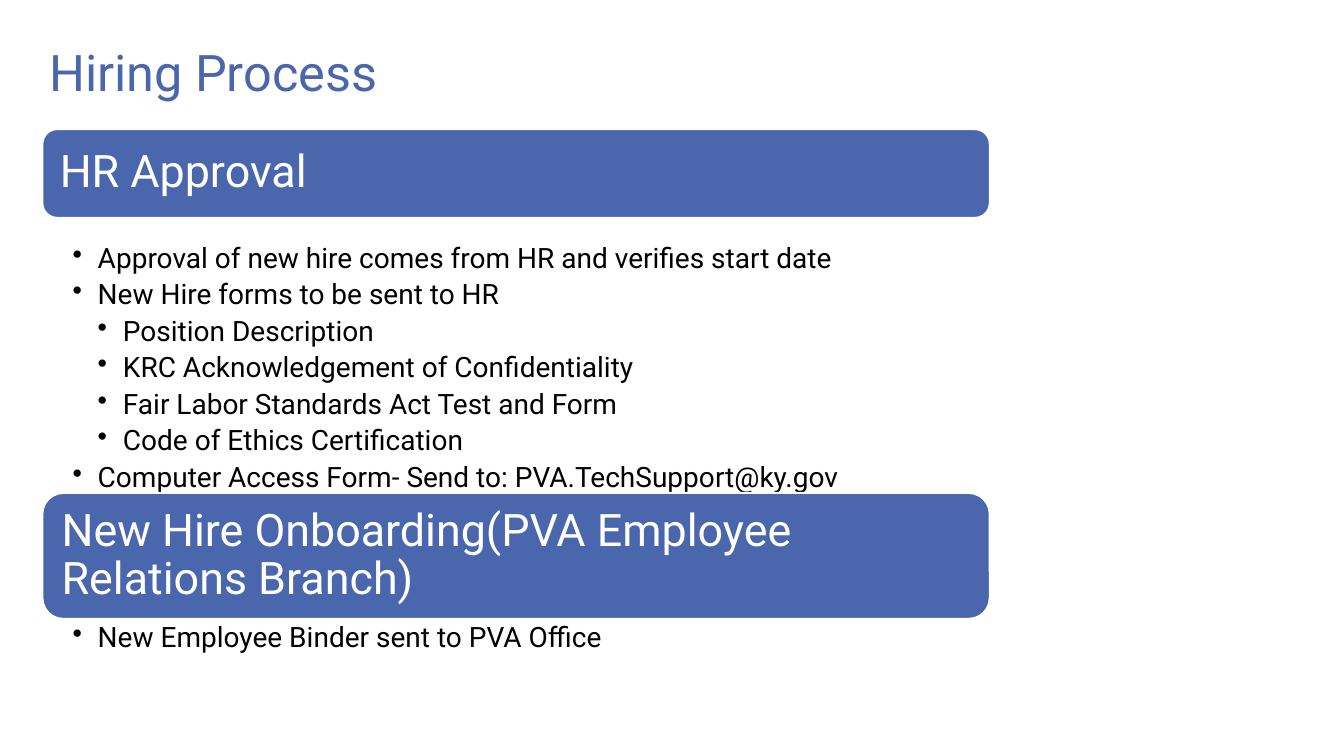
import pptx
import pptx.dml.color
import pptx.enum.shapes
import pptx.enum.text
import pptx.oxml.ns
import pptx.util
from lxml import etree

Pt = pptx.util.Pt
BLUE = pptx.dml.color.RGBColor(0x4A, 0x66, 0xAC)
WHITE = pptx.dml.color.RGBColor(0xFF, 0xFF, 0xFF)
BLACK = pptx.dml.color.RGBColor(0, 0, 0)
LEFT, WIDTH = 30.24, 676.8
MIDDLE = pptx.enum.text.MSO_ANCHOR.MIDDLE
ALIGN = pptx.enum.text.PP_ALIGN.LEFT


class Deck:
    font = "Roboto"
    step = 18

    def __init__(self):
        self.file = pptx.Presentation()
        self.file.slide_width = Pt(960)
        self.file.slide_height = Pt(540)
        self.slide = self.file.slides.add_slide(self.file.slide_layouts[6])

    def style(self, item, values):
        for name, value in values.items():
            setattr(item, name, value)

    def label(self, para, text, size, color):
        self.style(para, {"text": text, "alignment": ALIGN})
        self.style(para.font, {"name": self.font, "size": Pt(size)})
        para.font.color.rgb = color

    def box(self, left, top, width, height, values):
        shape = self.slide.shapes.add_textbox(Pt(left), Pt(top), Pt(width), Pt(height))
        self.style(shape.text_frame, {"word_wrap": True, **values})
        return shape.text_frame

    def title(self, text, left, top, width, height):
        frame = self.box(left, top, width, height, {"vertical_anchor": MIDDLE})
        self.label(frame.paragraphs[0], text, 36, BLUE)

    def banner(self, text, top, height):
        shape = self.slide.shapes.add_shape(
            pptx.enum.shapes.MSO_SHAPE.ROUNDED_RECTANGLE,
            Pt(LEFT), Pt(top), Pt(WIDTH), Pt(height))
        shape.shadow.inherit = False
        shape.fill.solid()
        shape.fill.fore_color.rgb = BLUE
        shape.line.color.rgb = WHITE
        shape.line.width = Pt(1.5)
        pad = Pt(9.4)
        self.style(shape.text_frame, {
            "word_wrap": True, "vertical_anchor": MIDDLE,
            "margin_left": pad, "margin_right": pad,
            "margin_top": pad, "margin_bottom": pad})
        para = shape.text_frame.paragraphs[0]
        self.label(para, text, 32, WHITE)
        para.line_spacing = 0.9

    def bullets(self, items, top, height):
        frame = self.box(LEFT, top, WIDTH, height, {
            "margin_left": Pt(21.6), "margin_right": Pt(14.4),
            "margin_top": Pt(2.9), "margin_bottom": Pt(2.9)})
        for index, (level, text) in enumerate(items):
            para = frame.add_paragraph() if index else frame.paragraphs[0]
            self.label(para, text, 20, BLACK)
            self.style(para, {"level": level, "line_spacing": 0.9, "space_after": Pt(4.5)})
            props = para._p.get_or_add_pPr()
            props.set("marL", str(Pt(self.step * level)))
            props.set("indent", str(-Pt(self.step)))
            mark = etree.Element(pptx.oxml.ns.qn("a:buChar"), char="•")
            props.find(pptx.oxml.ns.qn("a:spcAft")).addnext(mark)


def main():
    deck = Deck()
    deck.title("Hiring Process", 28, 14.4, 340.6, 73.4)
    deck.banner("HR Approval", 92.2, 63.4)
    deck.bullets([
        (1, "Approval of new hire comes from HR and verifies start date"),
        (1, "New Hire forms to be sent to HR"),
        (2, "Position Description"),
        (2, "KRC Acknowledgement of Confidentiality"),
        (2, "Fair Labor Standards Act Test and Form"),
        (2, "Code of Ethics Certification"),
        (1, "Computer Access Form- Send to: PVA.TechSupport@ky.gov"),
    ], 171.4, 180)
    deck.banner("New Hire Onboarding(PVA Employee Relations Branch)", 352.1, 90)
    deck.bullets([(1, "New Employee Binder sent to PVA Office")], 442.1, 56.9)
    deck.file.save("out.pptx")


if __name__ == "__main__":
    main()
